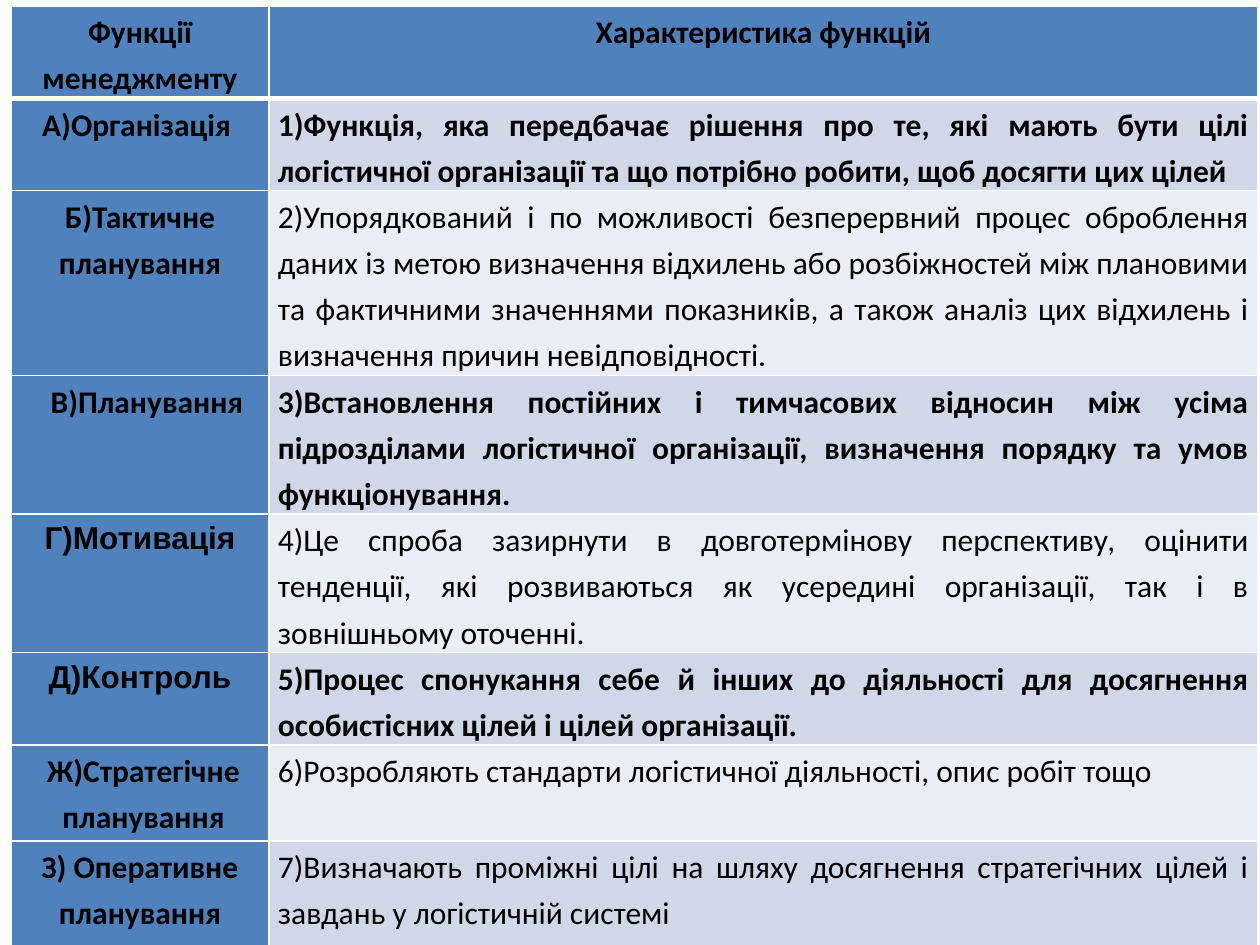
from pptx import Presentation
from pptx.dml.color import RGBColor as Rgb
from pptx.enum.text import MSO_ANCHOR as Anchor, PP_ALIGN as Align
from pptx.oxml import parse_xml
from pptx.oxml.ns import nsdecls
from pptx.util import Pt

PX = 914400 // 126
THEME = {
    "label": "4F81BD",
    "odd": "D0D8E8",
    "even": "E9EDF4",
    "border": "FFFFFF",
    "text": "000000",
    "font": "Calibri",
    "alternate_font": "Arial",
    "size": 18,
    "line_spacing": 1.2,
    "thin": 1,
    "thick": 3,
}
MARGIN = 9
COLUMN_WIDTHS = [258, 989]

# height, label, label shift, label font, description, bold description
ROWS = [
    (92, "Функції менеджменту", 0, "font", "Характеристика функцій", True),
    (92, "А)Організація", -7, "font",
     "1)Функція, яка передбачає рішення про те, які мають бути цілі логістичної "
     "організації та що потрібно робити, щоб досягти цих цілей", True),
    (185, "Б)Тактичне планування", 0, "font",
     "2)Упорядкований і по можливості безперервний процес оброблення даних із метою "
     "визначення відхилень або розбіжностей між плановими та фактичними значеннями "
     "показників, а також аналіз цих відхилень і визначення причин невідповідності.", False),
    (138, "В)Планування", 14, "font",
     "3)Встановлення постійних і тимчасових відносин між усіма підрозділами логістичної "
     "організації, визначення порядку та умов функціонування.", True),
    (138, "Г)Мотивація", 0, "alternate_font",
     "4)Це спроба зазирнути в довготермінову перспективу, оцінити тенденції, які "
     "розвиваються як усередині організації, так і в зовнішньому оточенні.", False),
    (92, "Д)Контроль", 0, "alternate_font",
     "5)Процес спонукання себе й інших до діяльності для досягнення особистісних "
     "цілей і цілей організації.", True),
    (96, "Ж)Стратегічне планування", 7, "font",
     "6)Розробляють стандарти логістичної діяльності, опис робіт тощо", False),
    (106, "З) Оперативне планування", 0, "font",
     "7)Визначають проміжні цілі на шляху досягнення стратегічних цілей і завдань "
     "у логістичній системі", False),
]


def fill_cell(cell, text, font, bold, align, color, shift):
    cell.margin_left = (MARGIN + shift) * PX
    cell.margin_right = MARGIN * PX
    cell.margin_top = cell.margin_bottom = 0
    cell.vertical_anchor = Anchor.TOP
    para = cell.text_frame.paragraphs[0]
    para.text = text
    para.alignment = align
    para.line_spacing = THEME["line_spacing"]
    span = para.runs[0]
    span.font.name = font
    span.font.size = Pt(THEME["size"])
    span.font.bold = bold
    span.font.color.rgb = Rgb.from_string(THEME["text"])
    cell.fill.solid()
    cell.fill.fore_color.rgb = Rgb.from_string(color)


def add_borders(cell, row_index):
    thick_sides = {0: "B", 1: "T"}
    properties = cell._tc.get_or_add_tcPr()
    for position, side in enumerate("LRTB"):
        weight = THEME["thick" if thick_sides.get(row_index) == side else "thin"]
        properties.insert(position, parse_xml(
            f'<a:ln{side} {nsdecls("a")} w="{Pt(weight)}"><a:solidFill>'
            f'<a:srgbClr val="{THEME["border"]}"/></a:solidFill></a:ln{side}>'))


deck = Presentation()
deck.slide_width = 1260 * PX
deck.slide_height = 945 * PX
page = deck.slides.add_slide(deck.slide_layouts[6])

table = page.shapes.add_table(
    len(ROWS), 2, 11 * PX, 6 * PX,
    sum(COLUMN_WIDTHS) * PX, sum(row[0] for row in ROWS) * PX).table
for column, width in zip(table.columns, COLUMN_WIDTHS):
    column.width = width * PX

for index, (height, label, shift, font, description, bold) in enumerate(ROWS):
    table.rows[index].height = height * PX
    label_cell, description_cell = table.rows[index].cells
    if index == 0:
        align, color = Align.CENTER, THEME["label"]
    else:
        align, color = Align.JUSTIFY, THEME["odd" if index % 2 else "even"]
    fill_cell(label_cell, label, THEME[font], True, Align.CENTER, THEME["label"], shift)
    fill_cell(description_cell, description, THEME["font"], bold, align, color, 0)
    for cell in (label_cell, description_cell):
        add_borders(cell, index)

deck.save("out.pptx")
